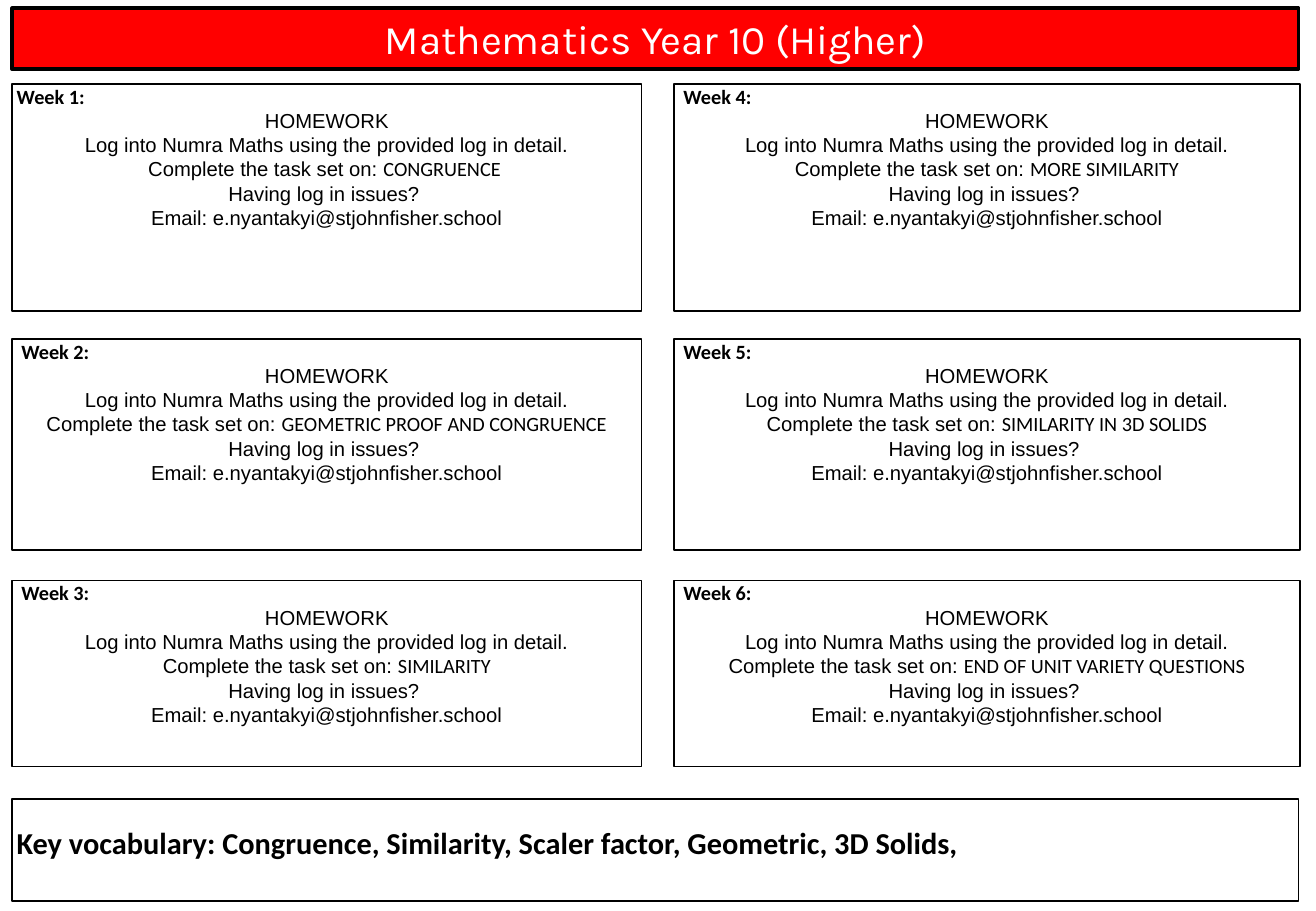
from pptx import Presentation
from pptx.dml.color import RGBColor as RGB
from pptx.enum.shapes import MSO_SHAPE as Kind
from pptx.enum.text import MSO_ANCHOR as Anchor, PP_ALIGN as Align
from pptx.util import Pt

BLACK = RGB(0, 0, 0)
WHITE = RGB(255, 255, 255)
RED = RGB(255, 0, 0)

COLS = [(7.2, 373), (399.6, 370.8)]
ROWS = [(49.7, 134.6), (200.9, 125.3), (344.2, 110.2)]
SPACE = 2.7
TASKS = [
    "CONGRUENCE ",
    "GEOMETRIC PROOF AND CONGRUENCE",
    "SIMILARITY",
    "MORE SIMILARITY",
    "SIMILARITY IN 3D SOLIDS",
    "END OF UNIT VARIETY QUESTIONS",
]


def write(para, text, font="Arial", size=12, color=BLACK, bold=False,
          align=Align.CENTER, indent=0):
    """Add a run to the paragraph; indent is its left margin in points."""
    para.alignment = align
    if indent:
        para._p.get_or_add_pPr().set("marL", str(Pt(indent)))
    run = para.add_run()
    run.text = text
    run.font.name = font
    run.font.size = Pt(size)
    run.font.bold = bold
    run.font.color.rgb = color


class Sheet:
    def __init__(self, deck):
        self.slide = deck.slides.add_slide(deck.slide_layouts[6])

    def box(self, x, y, w, h, fill=None, line=1, anchor=Anchor.TOP, top=0):
        """Draw an outlined box and return its text frame."""
        shape = self.slide.shapes.add_shape(
            Kind.RECTANGLE, Pt(x), Pt(y), Pt(w), Pt(h))
        shape.shadow.inherit = False
        if fill is None:
            shape.fill.background()
        else:
            shape.fill.solid()
            shape.fill.fore_color.rgb = fill
        shape.line.color.rgb = BLACK
        shape.line.width = Pt(line)
        frame = shape.text_frame
        frame.word_wrap = True
        frame.vertical_anchor = anchor
        frame.margin_left = frame.margin_right = frame.margin_bottom = 0
        frame.margin_top = Pt(top)
        return frame

    def title(self, text):
        frame = self.box(7.2, 5, 762.5, 36, RED, 2.25, Anchor.MIDDLE)
        write(frame.paragraphs[0], text, font="Karla", size=24, color=WHITE)

    def week(self, num, task, x, y, w, h):
        frame = self.box(x, y, w, h)
        write(frame.paragraphs[0], f"Week {num}:", font="Calibri", bold=True,
              align=Align.LEFT, indent=SPACE if num == 1 else 2 * SPACE)
        lines = [
            ("HOMEWORK", ""),
            ("Log into Numra Maths using the provided log in detail.", ""),
            ("Complete the task set on: ", task),
            ("Having log in issues? ", ""),
            ("Email: e.nyantakyi@stjohnfisher.school", ""),
        ]
        for text, topic in lines:
            para = frame.add_paragraph()
            write(para, text)
            if topic:
                write(para, topic, font="Calibri")

    def words(self, text):
        frame = self.box(7.2, 473.8, 762.5, 60.5, top=14.6)
        write(frame.paragraphs[0], text, font="Calibri", size=18, bold=True,
              align=Align.LEFT, indent=SPACE)


def main():
    deck = Presentation()
    deck.slide_width, deck.slide_height = Pt(780), Pt(540)
    sheet = Sheet(deck)
    sheet.title("Mathematics Year 10 (Higher)")
    for i, task in enumerate(TASKS):
        col, row = divmod(i, len(ROWS))
        (x, w), (y, h) = COLS[col], ROWS[row]
        sheet.week(i + 1, task, x, y, w, h)
    sheet.words("Key vocabulary: Congruence, Similarity, Scaler factor, "
                "Geometric, 3D Solids,")
    deck.save("out.pptx")


if __name__ == "__main__":
    main()
